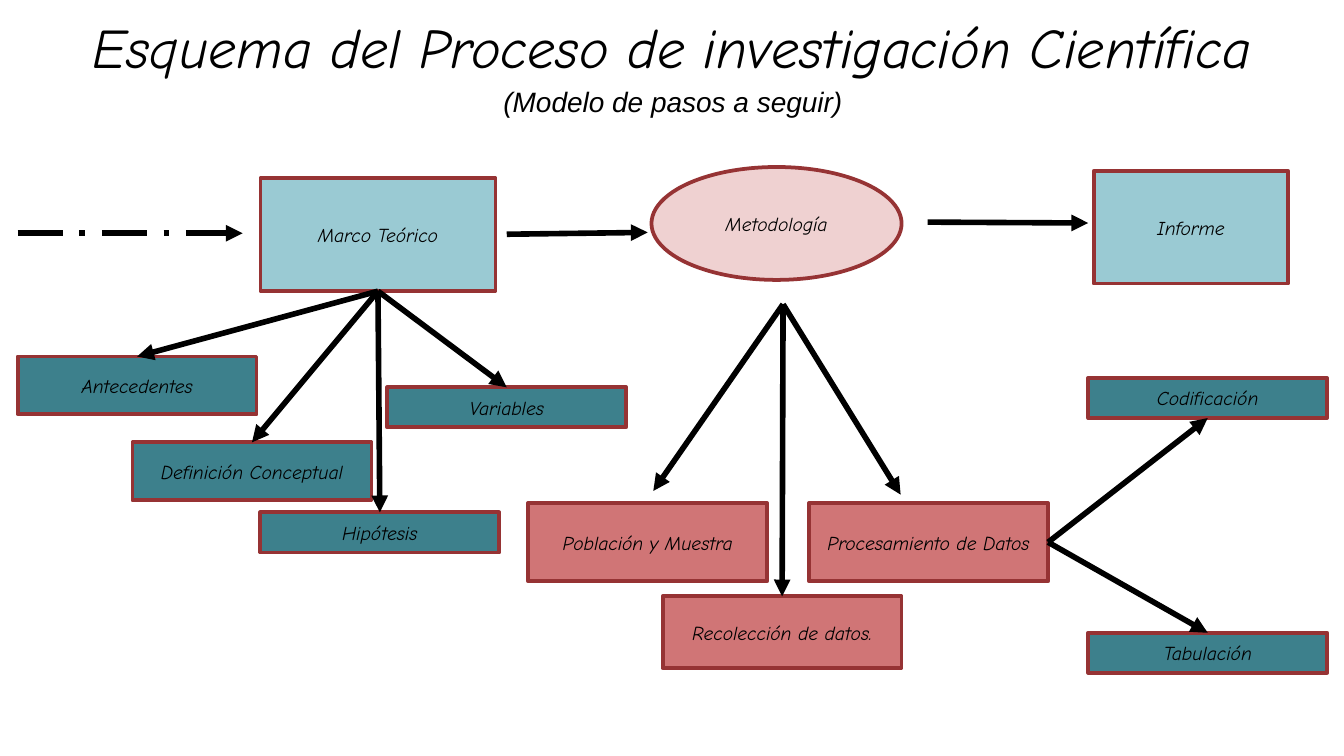
"""Build a slide with the scheme of the scientific research process."""
from lxml.etree import SubElement
from pptx import Presentation
from pptx.dml.color import RGBColor
from pptx.enum.dml import MSO_LINE
from pptx.enum.shapes import MSO_CONNECTOR, MSO_SHAPE
from pptx.enum.text import MSO_ANCHOR, MSO_AUTO_SIZE, PP_ALIGN
from pptx.oxml.ns import qn
from pptx.util import Pt

COLORS = {
    "text": "000000",
    "arrow": "000000",
    "border": "963334",
    "stage": "9ACAD3",
    "method": "EFD1D1",
    "theory": "3D808C",
    "step": "D07576",
}
TOP, RIGHT, BOTTOM = 0, 3, 2
STEP_WIDTH = 128
STAGE_HEIGHT, THIN, MEDIUM, TALL = 60.5, 21.5, 31, 42


class SchemeSlide:
    def __init__(self, slide, font="Comic Neue"):
        self.slide = slide
        self.font = font

    def color(self, name):
        return RGBColor.from_string(COLORS[name])

    def set_label(self, shape, text, size, font=None):
        frame = shape.text_frame
        frame.text = text
        frame.auto_size = MSO_AUTO_SIZE.NONE
        frame.word_wrap = True
        frame.vertical_anchor = MSO_ANCHOR.MIDDLE
        frame.margin_left = frame.margin_right = Pt(5)
        frame.margin_top = frame.margin_bottom = Pt(3)
        paragraph = frame.paragraphs[0]
        paragraph.alignment = PP_ALIGN.CENTER
        paragraph.space_before = Pt(0)
        run_font = paragraph.runs[0].font
        run_font.name = font or self.font
        run_font.size = Pt(size)
        run_font.italic = True
        run_font.color.rgb = self.color("text")

    def heading(self, index, text, bounds, size, font=None):
        shape = self.slide.placeholders[index]
        shape.left, shape.top, shape.width, shape.height = map(Pt, bounds)
        self.set_label(shape, text, size, font)

    def box(self, text, fill, left, top, width, height, kind=MSO_SHAPE.RECTANGLE):
        shape = self.slide.shapes.add_shape(kind, *map(Pt, (left, top, width, height)))
        shape.shadow.inherit = False
        shape.fill.solid()
        shape.fill.fore_color.rgb = self.color(fill)
        shape.line.color.rgb = self.color("border")
        shape.line.width = Pt(2)
        self.set_label(shape, text, 10.5)
        return shape

    def arrow(self, start, end, dash=None):
        start_joined, end_joined = (not isinstance(place[0], (int, float)) for place in (start, end))
        start_point = (0, 0) if start_joined else start
        end_point = (0, 0) if end_joined else end
        connector = self.slide.shapes.add_connector(
            MSO_CONNECTOR.STRAIGHT, *map(Pt, (*start_point, *end_point)))
        if start_joined:
            connector.begin_connect(*start)
        if end_joined:
            connector.end_connect(*end)
        connector.line.color.rgb = self.color("arrow")
        connector.line.width = Pt(3)
        if dash:
            connector.line.dash_style = dash
        properties = connector._element.spPr
        SubElement(properties.find(qn("a:ln")), qn("a:tailEnd"), type="triangle")
        SubElement(properties, qn("a:effectLst"))


def main():
    presentation = Presentation()
    presentation.slide_width, presentation.slide_height = Pt(720), Pt(405)
    scheme = SchemeSlide(presentation.slides.add_slide(presentation.slide_layouts[0]))

    scheme.heading(0, "Esquema del Proceso de investigación Científica", (20, 3.5, 680, 42), 30)
    scheme.heading(1, "(Modelo de pasos a seguir)", (119.5, 42, 482, 25), 15, "Arial")

    framework = scheme.box("Marco Teórico", "stage", 139.5, 95.5, 126, STAGE_HEIGHT)
    scheme.box("Metodología", "method", 349, 89.5, 134, STAGE_HEIGHT, MSO_SHAPE.OVAL)
    scheme.box("Informe", "stage", 586, 91.5, 104, STAGE_HEIGHT)

    steps = {
        text: scheme.box(text, fill, left, top, STEP_WIDTH, height)
        for text, fill, left, top, height in (
            ("Antecedentes", "theory", 9.5, 191, MEDIUM),
            ("Definición Conceptual", "theory", 71, 237, MEDIUM),
            ("Variables", "theory", 207.5, 207.5, THIN),
            ("Hipótesis", "theory", 139.5, 274.5, THIN),
            ("Población y Muestra", "step", 283, 269.5, TALL),
            ("Recolección de datos.", "step", 355, 319.5, 38.5),
            ("Procesamiento de Datos", "step", 433.5, 269.5, TALL),
            ("Codificación", "theory", 583, 202.5, THIN),
            ("Tabulación", "theory", 583, 339, THIN),
        )
    }

    scheme.arrow((9.5, 125), (130, 125), MSO_LINE.LONG_DASH_DOT)
    scheme.arrow((271.5, 125.5), (347, 124.5))
    scheme.arrow((497, 119), (583, 119.5))

    for text in ("Antecedentes", "Definición Conceptual", "Variables", "Hipótesis"):
        scheme.arrow((framework, BOTTOM), (steps[text], TOP))

    method_exit = (419.5, 163)
    for target in ((350, 263), (steps["Recolección de datos."], TOP), (482.5, 265)):
        scheme.arrow(method_exit, target)

    processing = steps["Procesamiento de Datos"]
    for text, side in (("Codificación", BOTTOM), ("Tabulación", TOP)):
        scheme.arrow((processing, RIGHT), (steps[text], side))

    presentation.save("out.pptx")


if __name__ == "__main__":
    main()
